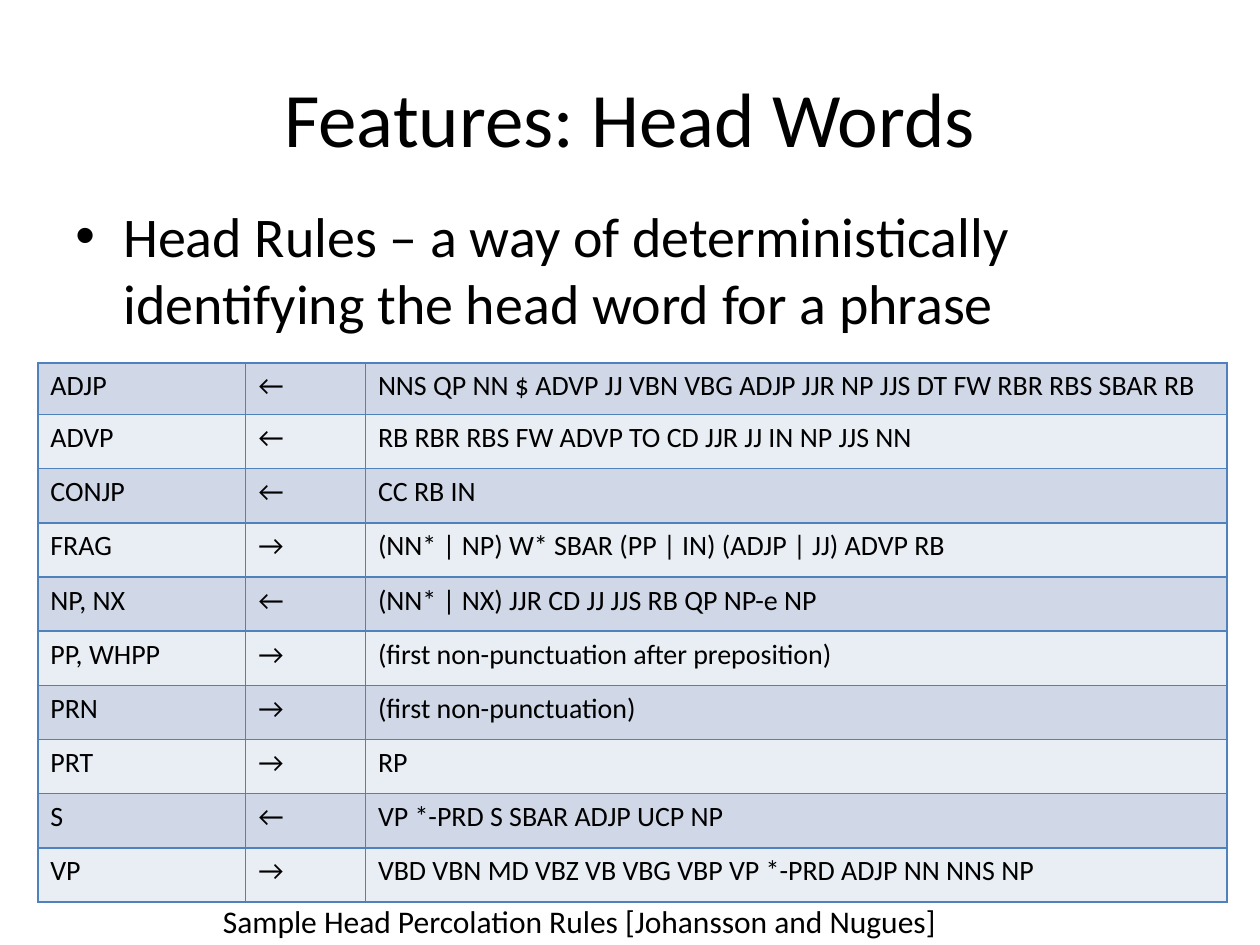
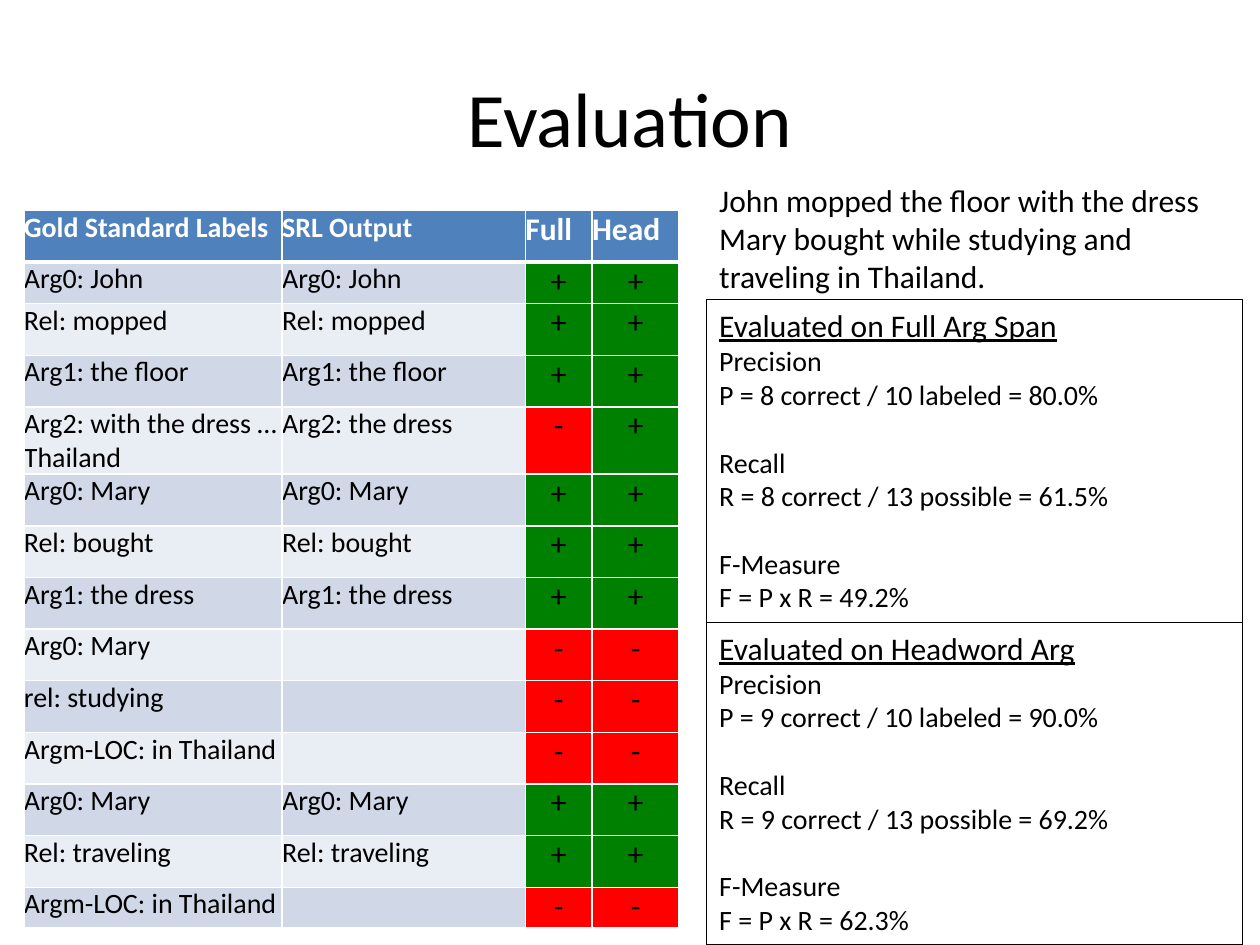
from lxml.etree import SubElement
from pptx import Presentation
from pptx.dml.color import RGBColor
from pptx.enum.shapes import MSO_SHAPE as Shape
from pptx.enum.text import MSO_ANCHOR as Anchor, PP_ALIGN as Align
from pptx.oxml.ns import qn
from pptx.util import Inches, Pt

FONT = "Calibri"
BLACK, WHITE, BLUE = "000000", "FFFFFF", "4F81BD"
BANDS = ("D0D8E8", "E9EDF4")
MARK_FILLS = {"+": "008000", "-": "FF0000"}

HEAD_RULES_TEXT = "Head Rules – a way of deterministically identifying the head word for a phrase"
HEAD_RULES = [
    ("ADJP", "←", "NNS QP NN $ ADVP JJ VBN VBG ADJP JJR NP JJS DT FW RBR RBS SBAR RB"),
    ("ADVP", "←", "RB RBR RBS FW ADVP TO CD JJR JJ IN NP JJS NN"),
    ("CONJP", "←", "CC RB IN"),
    ("FRAG", "→", "(NN* | NP) W* SBAR (PP | IN) (ADJP | JJ) ADVP RB"),
    ("NP, NX", "←", "(NN* | NX) JJR CD JJ JJS RB QP NP-e NP"),
    ("PP, WHPP", "→", "(first non-punctuation after preposition)"),
    ("PRN", "→", "(first non-punctuation)"),
    ("PRT", "→", "RP"),
    ("S", "←", "VP *-PRD S SBAR ADJP UCP NP"),
    ("VP", "→", "VBD VBN MD VBZ VB VBG VBP VP *-PRD ADJP NN NNS NP"),
]
RULES_CAPTION = "Sample Head Percolation Rules [Johansson and Nugues]"

SENTENCE = "John mopped the floor with the dress Mary bought while studying and traveling in Thailand."
LABEL_HEADER = ("Gold Standard Labels", "SRL Output", "Full", "Head")
LABELS = [
    ("Arg0: John", "Arg0: John", "+", "+"),
    ("Rel: mopped", "Rel: mopped", "+", "+"),
    ("Arg1: the floor", "Arg1: the floor", "+", "+"),
    ("Arg2: with the dress … Thailand", "Arg2: the dress", "-", "+"),
    ("Arg0: Mary", "Arg0: Mary", "+", "+"),
    ("Rel: bought", "Rel: bought", "+", "+"),
    ("Arg1: the dress", "Arg1: the dress", "+", "+"),
    ("Arg0: Mary", "", "-", "-"),
    ("rel: studying", "", "-", "-"),
    ("Argm-LOC: in Thailand", "", "-", "-"),
    ("Arg0: Mary", "Arg0: Mary", "+", "+"),
    ("Rel: traveling", "Rel: traveling", "+", "+"),
    ("Argm-LOC: in Thailand", "", "-", "-"),
]
SCORES = [
    ("Evaluated on Full Arg Span", [
        ("Precision", "P = 8 correct / 10 labeled = 80.0%"),
        ("Recall", "R = 8 correct / 13 possible = 61.5%"),
        ("F-Measure", "F = P x R = 49.2%"),
    ]),
    ("Evaluated on Headword Arg", [
        ("Precision", "P = 9 correct / 10 labeled = 90.0%"),
        ("Recall", "R = 9 correct / 13 possible = 69.2%"),
        ("F-Measure", "F = P x R = 62.3%"),
    ]),
]


def rgb(color):
    return RGBColor.from_string(color)


def write(paragraph, text, size=16, color=BLACK, bold=False, underline=False,
          align=Align.LEFT, before=0):
    paragraph.alignment = align
    paragraph.space_before = Pt(before)
    if text:
        run = paragraph.add_run()
        run.text = text
        font = run.font
        font.name, font.size, font.bold, font.underline = FONT, Pt(size), bold, underline
        font.color.rgb = rgb(color)
    return paragraph


def add_text(slide, box, text, wrap=True, anchor=Anchor.TOP, **style):
    frame = slide.shapes.add_textbox(*map(Inches, box)).text_frame
    frame.word_wrap = wrap
    frame.vertical_anchor = anchor
    return write(frame.paragraphs[0], text, **style)


def add_titled_slide(presentation, title):
    slide = presentation.slides.add_slide(presentation.slide_layouts[6])
    add_text(slide, (0.5, 0.3, 9, 1.25), title, size=44, align=Align.CENTER, anchor=Anchor.MIDDLE)
    return slide


def add_bullet(paragraph, indent):
    properties = paragraph._p.get_or_add_pPr()
    properties.set("marL", str(Inches(indent)))
    properties.set("indent", str(-Inches(indent)))
    SubElement(properties, qn("a:buFont"), typeface="Arial")
    SubElement(properties, qn("a:buChar"), char="•")


def set_borders(cell, color, **widths):
    properties = cell._tc.get_or_add_tcPr()
    for side in "LRTB":
        line = SubElement(properties, qn(f"a:ln{side}"), w=str(Pt(widths.get(side, 1))))
        SubElement(SubElement(line, qn("a:solidFill")), qn("a:srgbClr"), val=color)


def add_grid(slide, left, top, widths, heights):
    table = slide.shapes.add_table(len(heights), len(widths), Inches(left), Inches(top),
                                   Inches(sum(widths)), Inches(sum(heights))).table
    table.first_row = table.horz_banding = False
    for column, width in zip(table.columns, widths):
        column.width = Inches(width)
    for row, height in zip(table.rows, heights):
        row.height = Inches(height)
    return table


def fill_cell(cell, text, fill, border, widths={}, margin=None, **style):
    set_borders(cell, border, **widths)
    cell.fill.solid()
    cell.fill.fore_color.rgb = rgb(fill)
    if margin is not None:
        cell.margin_left = cell.margin_right = cell.margin_top = cell.margin_bottom = margin
    write(cell.text_frame.paragraphs[0], text, **style)


def add_rules_table(slide):
    table = add_grid(slide, 0.3, 2.88, (1.65, 0.95, 6.84), [0.41] + [0.43] * 9)
    for row, rule in enumerate(HEAD_RULES):
        for column, text in enumerate(rule):
            fill_cell(table.cell(row, column), text, BANDS[row % 2], BLUE)


def add_labels_table(slide):
    table = add_grid(slide, 0.19, 1.67, (2.05, 1.93, 0.53, 0.69), [0.41, 0.33] + [0.41] * 11 + [0.32])
    for column, text in enumerate(LABEL_HEADER):
        fill_cell(table.cell(0, column), text, BLUE, WHITE, {"B": 3}, margin=0,
                  size=16 if column < 2 else 18, color=WHITE, bold=True)
    for row, labels in enumerate(LABELS, 1):
        for column, text in enumerate(labels):
            is_mark = text in MARK_FILLS
            fill_cell(table.cell(row, column), text, MARK_FILLS.get(text, BANDS[(row - 1) % 2]),
                      WHITE, {"T": 3} if row == 1 else {}, margin=0, size=18 if is_mark else 16,
                      align=Align.CENTER if is_mark else Align.LEFT)


def add_score_box(slide, top, heading, measures):
    shape = slide.shapes.add_shape(Shape.RECTANGLE, Inches(5.61), Inches(top), Inches(4.25), Inches(2.56))
    shape.shadow.inherit = False
    shape.fill.background()
    shape.line.color.rgb = rgb(BLACK)
    shape.line.width = Pt(0.75)
    frame = shape.text_frame
    frame.word_wrap = True
    frame.vertical_anchor = Anchor.TOP
    write(frame.paragraphs[0], heading, size=18, underline=True)
    for index, (name, formula) in enumerate(measures):
        write(frame.add_paragraph(), name, before=19.5 if index else 0)
        write(frame.add_paragraph(), formula)


def main():
    presentation = Presentation()
    presentation.slide_width, presentation.slide_height = Inches(10), Inches(7.5)

    slide = add_titled_slide(presentation, "Features: Head Words")
    add_bullet(add_text(slide, (0.5, 1.55, 9, 5.15), HEAD_RULES_TEXT, size=32, before=6.4), 0.38)
    add_rules_table(slide)
    add_text(slide, (1.67, 7.11, 5.92, 0.4), RULES_CAPTION, wrap=False, size=18)

    slide = add_titled_slide(presentation, "Evaluation")
    add_labels_table(slide)
    add_text(slide, (5.61, 1.39, 4.25, 1.01), SENTENCE, size=18)
    for index, (heading, measures) in enumerate(SCORES):
        add_score_box(slide, 2.38 + index * 2.56, heading, measures)

    presentation.save("out.pptx")


if __name__ == "__main__":
    main()
